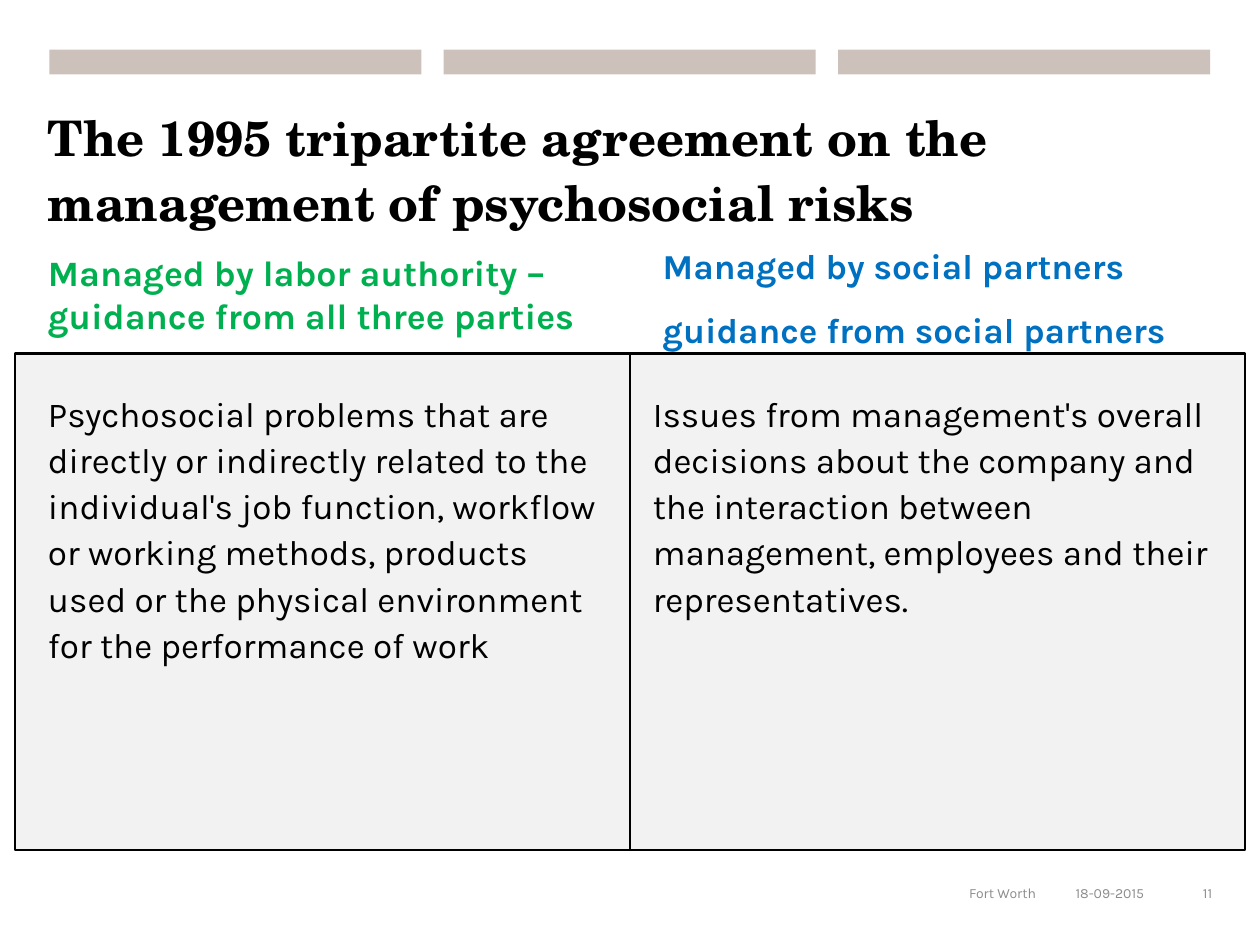
from dataclasses import dataclass
from pptx import Presentation
from pptx.dml.color import RGBColor
from pptx.enum.shapes import MSO_SHAPE as Shape
from pptx.enum.text import MSO_ANCHOR as Anchor, MSO_AUTO_SIZE as AutoSize, PP_ALIGN as Align
from pptx.util import Pt
from lxml.etree import SubElement
from pptx.oxml.ns import qn


@dataclass(frozen=True)
class Theme:
    serif: str = "TeX Gyre Schola"
    sans: str = "Karla"
    black: str = "000000"
    green: str = "00B050"
    blue: str = "0070C0"
    gray: str = "8C8C8C"
    bar: str = "CCC2BB"
    panel: str = "F2F2F2"
    title_size: float = 28
    lead_size: float = 20.4
    body_size: float = 20
    footer_size: float = 8


theme = Theme()

TITLE = "The 1995 tripartite agreement on the management of psychosocial risks"
LEFT_HEADING = ["Managed by labor authority – guidance from all three parties"]
RIGHT_HEADING = ["Managed by social partners", "guidance from social partners"]
LEFT_BODY = [
    "Psychosocial problems that are directly or indirectly related to the individual's "
    "job function, workflow or working methods, products used or the physical "
    "environment for the performance of work"
]
RIGHT_BODY = [
    "Issues from management's overall decisions about the company and the interaction "
    "between management, employees and their representatives."
]
COLUMN = 334.8
PLACEHOLDERS = [
    (0, [TITLE], (20.2, 54.7, 680.4, 85), theme.serif, theme.title_size, theme.black, True, 1.1),
    (1, LEFT_HEADING, (20.2, 139.7, COLUMN, 62.6), theme.sans, theme.lead_size, theme.green, True, 1.0),
    (2, LEFT_BODY, (20.2, 218.2, COLUMN, 286.6), theme.sans, theme.body_size, theme.black, False, 1.1),
    (3, RIGHT_HEADING, (371.5, 133.9, COLUMN, 51.1), theme.sans, theme.body_size, theme.blue, True, 1.1),
    (4, RIGHT_BODY, (365.8, 218.2, COLUMN, 286.6), theme.sans, theme.body_size, theme.black, False, 1.1),
]
FOOTERS = [
    ("Fort Worth", 377.3, 226.8, 12),
    ("18-09-2015", 604.1, 56.9, 7.2),
    ("11", 660.2, 39.6, 7.2),
]


def color(code):
    return RGBColor.from_string(code)


def add_rectangle(slide, frame, fill, line=None):
    box = slide.shapes.add_shape(Shape.RECTANGLE, *map(Pt, frame))
    box.shadow.inherit = False
    box.fill.solid()
    box.fill.fore_color.rgb = color(fill)
    if line:
        box.line.color.rgb = color(line)
        box.line.width = Pt(1.5)
    else:
        box.line.fill.background()
    return box


def write(frame, lines, font, size, ink, bold=False, spacing=1.0, align=Align.LEFT):
    frame.word_wrap = True
    frame.auto_size = AutoSize.NONE
    for number, line in enumerate(lines):
        para = frame.add_paragraph() if number else frame.paragraphs[0]
        para.alignment = align
        para.line_spacing = spacing
        para.space_before = Pt(10 if number else 0)
        span = para.add_run()
        span.text = line
        span.font.name = font
        span.font.size = Pt(size)
        span.font.bold = bold
        span.font.color.rgb = color(ink)


def remove_bullets(frame):
    for para in frame.paragraphs:
        settings = para._p.get_or_add_pPr()
        settings.set("marL", "0")
        settings.set("indent", "0")
        SubElement(settings, qn("a:buNone"))


def main():
    deck = Presentation()
    deck.slide_width, deck.slide_height = Pt(720), Pt(540)
    slide = deck.slides.add_slide(deck.slide_layouts[4])

    bar_width, bar_pitch, panel_width = 212.6, 225.3, 351.4
    backdrop = [
        add_rectangle(slide, (28.3 + column * bar_pitch, 28.3, bar_width, 14.2), theme.bar)
        for column in range(3)
    ]
    backdrop += [
        add_rectangle(slide, (left, 202.1, panel_width, 283.6), theme.panel, theme.black)
        for left in (360, 360 - panel_width)
    ]
    tree = slide.shapes._spTree
    for position, box in enumerate(backdrop, start=2):
        tree.insert(position, box._element)

    holders = {holder.placeholder_format.idx: holder for holder in slide.placeholders}
    for index, lines, place, font, size, ink, bold, spacing in PLACEHOLDERS:
        holder = holders[index]
        holder.left, holder.top, holder.width, holder.height = map(Pt, place)
        frame = holder.text_frame
        frame.vertical_anchor = Anchor.TOP
        write(frame, lines, font, size, ink, bold, spacing)
        if index:
            remove_bullets(frame)

    for text, left, width, inset in FOOTERS:
        frame = slide.shapes.add_textbox(Pt(left), Pt(496.1), Pt(width), Pt(28.8)).text_frame
        frame.vertical_anchor = Anchor.MIDDLE
        frame.margin_right = Pt(inset)
        write(frame, [text], theme.sans, theme.footer_size, theme.gray, align=Align.RIGHT)

    deck.save("out.pptx")


if __name__ == "__main__":
    main()
